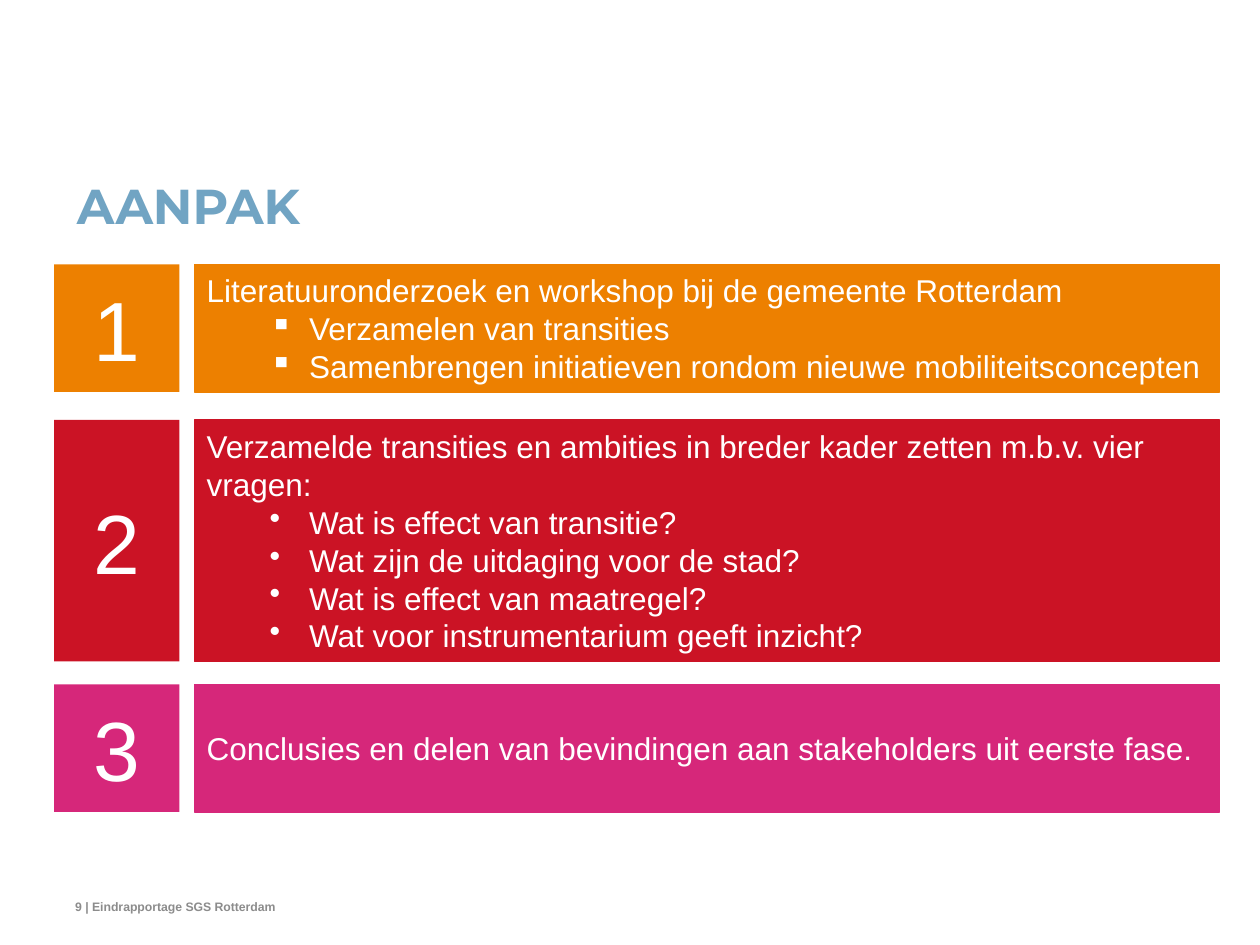
import pptx
import pptx.dml.color
import pptx.enum.shapes
import pptx.enum.text
import pptx.oxml.ns
import pptx.util
from lxml import etree

Pt = pptx.util.Pt
RGBColor = pptx.dml.color.RGBColor
Align = pptx.enum.text.PP_ALIGN
Anchor = pptx.enum.text.MSO_ANCHOR

BLUE = RGBColor(0x71, 0xA4, 0xC3)
GREY = RGBColor(0x8C, 0x8C, 0x8C)
WHITE = RGBColor(0xFF, 0xFF, 0xFF)
ORANGE = RGBColor(0xED, 0x80, 0x00)
RED = RGBColor(0xCB, 0x13, 0x25)
PINK = RGBColor(0xD6, 0x27, 0x7A)

NUMBER_LEFT, NUMBER_WIDTH = 31, 71.5
DETAIL_LEFT, DETAIL_WIDTH = 111, 586

# top, height, colour, heading, bullet character, bullet points
STEPS = [
    (151, 73, ORANGE, "Literatuuronderzoek en workshop bij de gemeente Rotterdam", "▪",
     ["Verzamelen van transities",
      "Samenbrengen initiatieven rondom nieuwe mobiliteitsconcepten"]),
    (240, 138, RED,
     "Verzamelde transities en ambities in breder kader zetten m.b.v. vier vragen:", "•",
     ["Wat is effect van transitie?",
      "Wat zijn de uitdaging voor de stad?",
      "Wat is effect van maatregel?",
      "Wat voor instrumentarium geeft inzicht?"]),
    (391, 73, PINK,
     "Conclusies en delen van bevindingen aan stakeholders uit eerste fase.", None, []),
]


def add_bullet(paragraph, character):
    paragraph.level = 1
    properties = paragraph._p.get_or_add_pPr()
    properties.set("marL", str(Pt(58.5)))
    properties.set("indent", str(-Pt(22.5)))
    bullet = etree.SubElement(properties, pptx.oxml.ns.qn("a:buChar"))
    bullet.set("char", character)


def write_text(paragraph, text, size=18, font="Arial", color=WHITE, bold=False,
               align=Align.LEFT, bullet=None, line_spacing=None):
    paragraph.alignment = align
    if line_spacing:
        paragraph.line_spacing = Pt(line_spacing)
    if bullet:
        add_bullet(paragraph, bullet)
    run = paragraph.add_run()
    run.text = text
    run.font.name = font
    run.font.size = Pt(size)
    run.font.bold = bold
    run.font.color.rgb = color


def add_label(slide, left, top, width, height, text, anchor=Anchor.TOP, **text_format):
    """Add a text box without margins."""
    box = slide.shapes.add_textbox(Pt(left), Pt(top), Pt(width), Pt(height))
    frame = box.text_frame
    frame.word_wrap = True
    frame.vertical_anchor = anchor
    frame.margin_left = frame.margin_right = frame.margin_top = frame.margin_bottom = 0
    write_text(frame.paragraphs[0], text, **text_format)


def add_block(slide, left, top, width, height, color, outlined=False):
    """Add a filled rectangle and return its text frame."""
    shape = slide.shapes.add_shape(
        pptx.enum.shapes.MSO_SHAPE.RECTANGLE, Pt(left), Pt(top), Pt(width), Pt(height))
    shape.shadow.inherit = False
    shape.fill.solid()
    shape.fill.fore_color.rgb = color
    if outlined:
        shape.line.color.rgb = color
        shape.line.width = Pt(0.75)
    else:
        shape.line.fill.background()
    frame = shape.text_frame
    frame.word_wrap = True
    frame.vertical_anchor = Anchor.MIDDLE
    return frame


def add_step(slide, number, top, height, color, heading, bullet, points):
    number_frame = add_block(slide, NUMBER_LEFT, top, NUMBER_WIDTH, height, color)
    write_text(number_frame.paragraphs[0], str(number), size=48, align=Align.CENTER)
    detail_frame = add_block(slide, DETAIL_LEFT, top, DETAIL_WIDTH, height, color,
                             outlined=True)
    write_text(detail_frame.paragraphs[0], heading)
    for point in points:
        write_text(detail_frame.add_paragraph(), point, bullet=bullet)


def main():
    presentation = pptx.Presentation()
    presentation.slide_width, presentation.slide_height = Pt(720), Pt(540)
    slide = presentation.slides.add_slide(presentation.slide_layouts[6])
    add_label(slide, 44, 106, 634, 57, "AANPAK", size=28, font="Montserrat",
              color=BLUE, bold=True, line_spacing=28)
    for number, step in enumerate(STEPS, start=1):
        add_step(slide, number, *step)
    add_label(slide, 43, 508, 340, 14, "9 | Eindrapportage SGS Rotterdam",
              anchor=Anchor.BOTTOM, size=7, color=GREY, bold=True)
    presentation.save("out.pptx")


if __name__ == "__main__":
    main()
